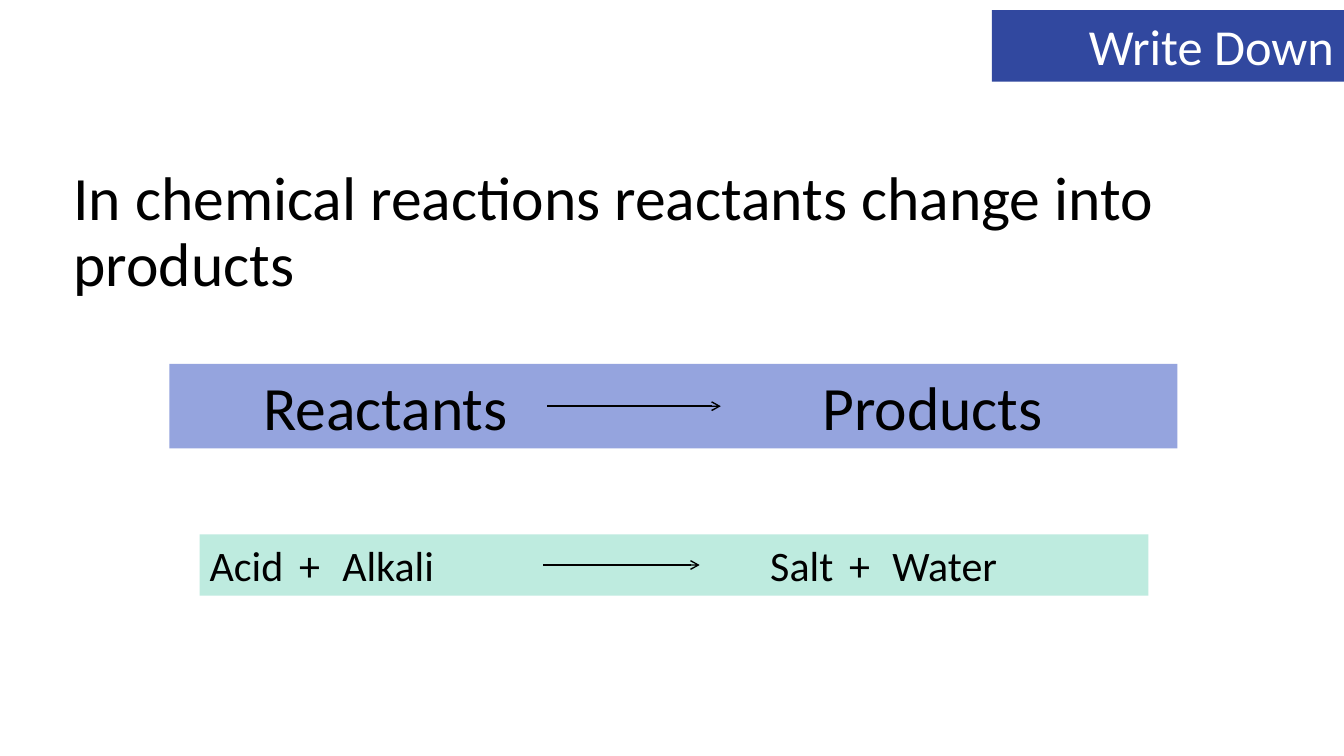
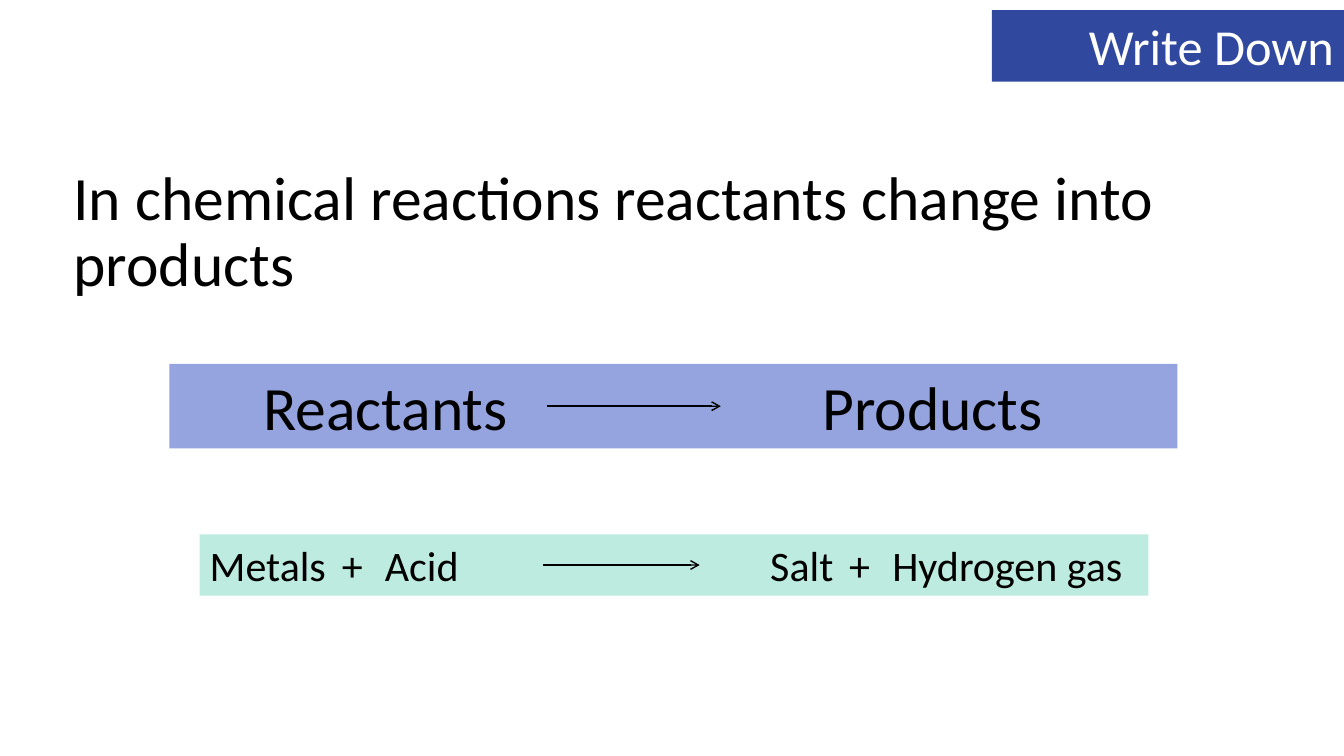
from lxml.etree import SubElement
from pptx import Presentation
from pptx.dml.color import RGBColor
from pptx.enum.shapes import MSO_CONNECTOR_TYPE as Connector, MSO_SHAPE as Shape
from pptx.enum.text import MSO_ANCHOR as Anchor, PP_ALIGN as Align
from pptx.oxml.ns import qn
from pptx.util import Inches, Pt

SLIDE_WIDTH, SLIDE_HEIGHT = Inches(13.33), Inches(7.5)
BLANK_LAYOUT = 6
INSET = 0.75
STATEMENT = "In chemical reactions reactants change into products"
REACTIONS = [
    ("Acid + Alkali", "Salt + Water"),
    ("Metals + Acid", "Salt + Hydrogen gas"),
]


def color(value):
    return RGBColor.from_string(value)


def apply_format(target, values):
    for name, value in values.items():
        setattr(target, name, value)


class Deck:
    """Style and current slide; lengths are columns and rows of a 100 by 100 grid."""

    FONT = "Calibri"
    INK, WHITE = "000000", "FFFFFF"
    NAVY, LAVENDER, MINT = "31489F", "95A4DE", "BEEBDF"
    # Letter spacing around a plus sign, in hundredths of a point
    PLUS_SPACING = "450"

    def __init__(self):
        self.presentation = Presentation()
        apply_format(self.presentation, {
            "slide_width": SLIDE_WIDTH, "slide_height": SLIDE_HEIGHT})
        self.slide = None

    def columns(self, count):
        return round(SLIDE_WIDTH * count / 100)

    def rows(self, count):
        return round(SLIDE_HEIGHT * count / 100)

    def box(self, left, top, width, height):
        return (self.columns(left), self.rows(top),
                self.columns(width), self.rows(height))

    def new_slide(self):
        layout = self.presentation.slide_layouts[BLANK_LAYOUT]
        self.slide = self.presentation.slides.add_slide(layout)

    def add_run(self, paragraph, text, size, ink=INK):
        run = paragraph.add_run()
        run.text = text
        apply_format(run.font, {"name": self.FONT, "size": Pt(size)})
        run.font.color.rgb = color(ink)
        return run

    def statement(self, text, area, size):
        frame = self.slide.shapes.add_textbox(*self.box(*area)).text_frame
        frame.word_wrap = True
        paragraph = frame.paragraphs[0]
        apply_format(paragraph, {"line_spacing": 0.9, "space_before": Pt(10)})
        self.add_run(paragraph, text, size)

    def band(self, area, fill, align=Align.LEFT, inset=INSET):
        """Draw a filled bar and return its empty paragraph."""
        shape = self.slide.shapes.add_shape(Shape.RECTANGLE, *self.box(*area))
        shape.shadow.inherit = False
        shape.fill.solid()
        shape.fill.fore_color.rgb = color(fill)
        shape.line.fill.background()
        apply_format(shape.text_frame, {
            "word_wrap": True, "vertical_anchor": Anchor.MIDDLE,
            "margin_left": self.columns(inset)})
        paragraph = shape.text_frame.paragraphs[0]
        paragraph.alignment = align
        return paragraph

    def tag(self, text, area, size):
        paragraph = self.band(area, self.NAVY, Align.RIGHT)
        self.add_run(paragraph, text, size, self.WHITE)

    def arrow(self, start, end, row):
        connector = self.slide.shapes.add_connector(
            Connector.STRAIGHT, self.columns(start), self.rows(row),
            self.columns(end), self.rows(row))
        connector.line.width = Pt(1)
        connector.line.color.rgb = color(self.INK)
        SubElement(connector.line._get_or_add_ln(), qn("a:tailEnd"), type="arrow")
        SubElement(connector._element.spPr, qn("a:effectLst"))

    def equation(self, sides, area, fill, size, arrow, right_side, inset=INSET):
        """Set both sides of a reaction in a bar, with an arrow between them."""
        left, top, _, height = area
        paragraph = self.band(area, fill, inset=inset)
        tabs = SubElement(paragraph._p.get_or_add_pPr(), qn("a:tabLst"))
        position = self.columns(right_side - left - inset)
        SubElement(tabs, qn("a:tab"), pos=str(position), algn="l")
        for index, term in enumerate("\t".join(sides).split(" + ")):
            if index:
                plus = self.add_run(paragraph, " + ", size)
                plus.font._element.set("spc", self.PLUS_SPACING)
            self.add_run(paragraph, term, size)
        self.arrow(*arrow, top + height / 2)


def main():
    deck = Deck()
    for reaction in REACTIONS:
        deck.new_slide()
        deck.statement(STATEMENT, (4.73, 21.47, 90.85, 73.87), 44)
        deck.equation(("Reactants", "Products"), (12.6, 48.13, 75, 11.2),
                      deck.LAVENDER, 44, (40.73, 53.63), 61.2, inset=6.98)
        deck.equation(reaction, (14.85, 70.67, 70.59, 8.13),
                      deck.MINT, 30, (40.43, 52.06), 57.31)
        deck.tag("Write Down", (73.8, 1.33, 26.2, 9.47), 36)
    deck.presentation.save("out.pptx")


if __name__ == "__main__":
    main()
